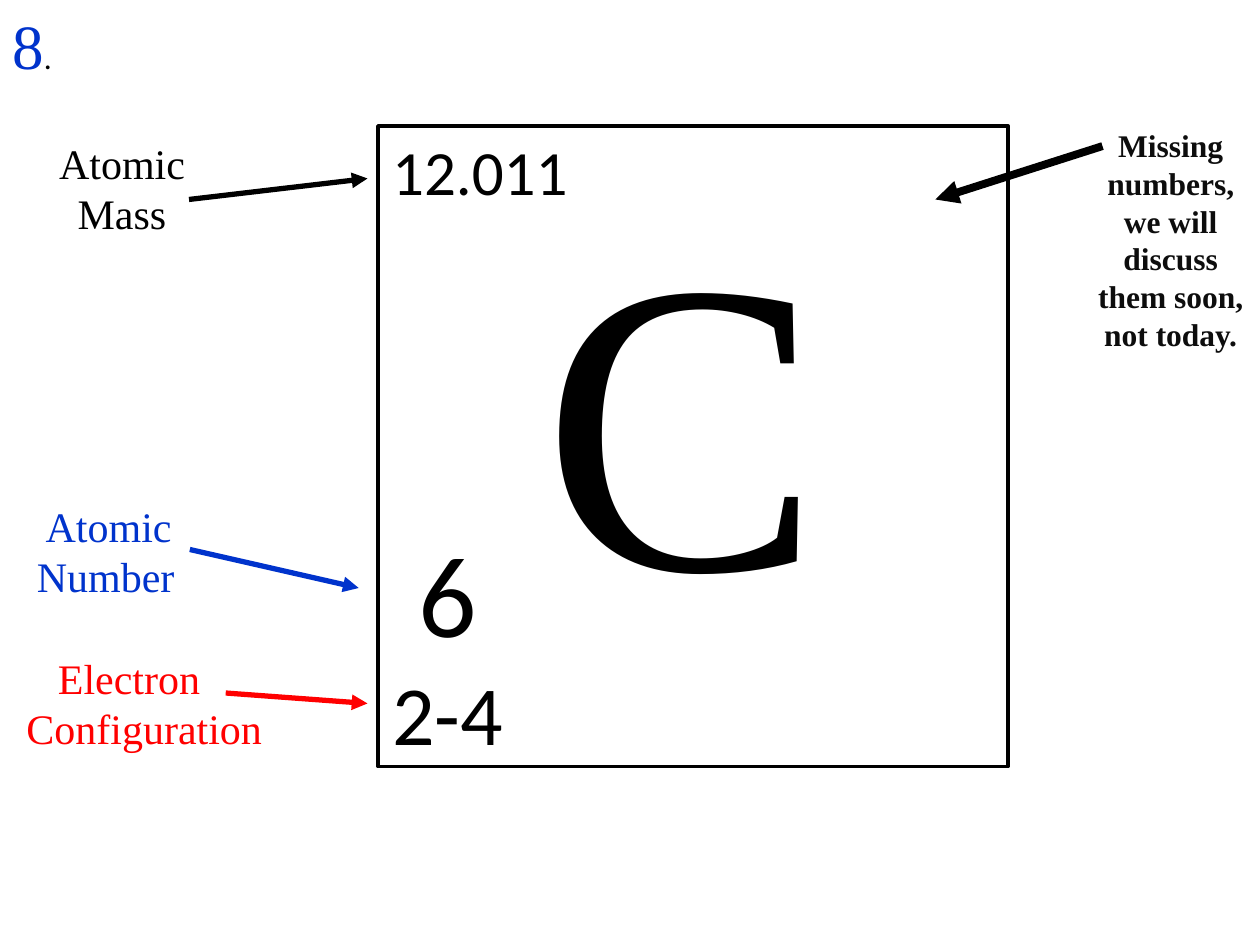
from lxml import etree
from pptx import Presentation
from pptx.dml.color import RGBColor
from pptx.enum.shapes import MSO_CONNECTOR, MSO_SHAPE
from pptx.enum.text import MSO_AUTO_SIZE, PP_ALIGN
from pptx.oxml.ns import qn
from pptx.util import Pt

STRAIGHT = MSO_CONNECTOR.STRAIGHT
RECTANGLE = MSO_SHAPE.RECTANGLE
GROW = MSO_AUTO_SIZE.SHAPE_TO_FIT_TEXT
LEFT, CENTER = PP_ALIGN.LEFT, PP_ALIGN.CENTER

SERIF, SANS = "Times New Roman", "Calibri"
BLACK, WHITE, BLUE, RED, CHARCOAL = "000000", "FFFFFF", "0033CC", "FF0000", "0D0D0D"


def color(value):
    """Turn a hex string into a colour."""
    return RGBColor.from_string(value)


def style(span, size, ink, font, bold=False):
    """Set the font of one run."""
    span.font.size = Pt(size)
    span.font.name = font
    span.font.bold = bold
    span.font.color.rgb = color(ink)


def add_text(page, box, lines, font, align=LEFT, bold=False):
    """Add a text box from lines of (text, size, ink, indent, space before)."""
    frame = page.shapes.add_textbox(*map(Pt, box)).text_frame
    frame.word_wrap = True
    frame.auto_size = GROW
    for index, (text, size, ink, indent, gap) in enumerate(lines):
        para = frame.add_paragraph() if index else frame.paragraphs[0]
        para.text = text
        para.alignment = align
        para.space_before = Pt(gap)
        para._p.get_or_add_pPr().set("marL", str(Pt(indent)))
        style(para.runs[0], size, ink, font, bold)
    return frame


def add_arrow(page, start, end, ink, width=3):
    """Draw a straight arrow with a triangle at its end."""
    arrow = page.shapes.add_connector(STRAIGHT, *map(Pt, start + end))
    arrow.line.color.rgb = color(ink)
    arrow.line.width = Pt(width)
    etree.SubElement(arrow.line._get_or_add_ln(), qn("a:tailEnd"), type="triangle")
    etree.SubElement(arrow._element.spPr, qn("a:effectLst"))


def add_element_tile(page, box):
    """Draw the element square with its symbol and figures."""
    left, top, width, height = box
    tile = page.shapes.add_shape(RECTANGLE, *map(Pt, box))
    tile.shadow.inherit = False
    tile.fill.solid()
    tile.fill.fore_color.rgb = color(WHITE)
    tile.line.color.rgb = color(BLACK)
    tile.line.width = Pt(2)
    add_text(page, (left + 1, top, width - 1, 51), [("12.011", 36, BLACK, 0, 0)], SANS)
    figures = [("6", 66, BLACK, 15, 0), ("2-4", 48, BLACK, 0, 0)]
    add_text(page, (left + 1, top + 223, 180, 145.5), figures, SANS)
    add_text(page, (left + 87, top + 11.5, 138, 297), [("C", 239, BLACK, 0, 0)], SERIF)


def add_labels(page, box):
    """Name the figures on the left and point to each of them."""
    left, top, width, height = box
    mass = [("Atomic", 24, BLACK, 0, 0), ("Mass", 24, BLACK, 0, 0)]
    add_text(page, (left, top, 135.5, 65.5), mass, SERIF, CENTER)
    lower = [
        ("Atomic", 24, BLUE, 17, 0),
        ("Number", 24, BLUE, 12, 0),
        ("Electron", 24, RED, 24, 29),
        ("Configuration", 24, RED, 6, 0),
    ]
    add_text(page, (left, top + 207.5, width, 152.5), lower, SERIF)
    arrows = [
        ((106, 39), (208, 27), BLACK),
        ((106.5, 239), (203, 261), BLUE),
        ((127, 321), (208, 327), RED),
    ]
    for (x1, y1), (x2, y2), ink in arrows:
        add_arrow(page, (left + x1, top + y1), (left + x2, top + y2), ink)


def add_note(page, box):
    """Place the note about missing numbers with its arrow."""
    left, top, width, height = box
    add_arrow(page, (left + 13.5, top + 15), (left - 82, top + 45.5), BLACK, 4.5)
    words = "Missing numbers, we will discuss them soon, not today."
    add_text(page, box, [(words, 18, CHARCOAL, 0, 0)], SERIF, CENTER, True)


def add_question_number(page, box):
    """Place the question number with its smaller full stop."""
    frame = add_text(page, box, [("8", 36, BLUE, 0, 0)], SERIF)
    stop = frame.paragraphs[0].add_run()
    stop.text = "."
    style(stop, 18, BLACK, SANS)


def main():
    """Build the slide and save it."""
    deck = Presentation()
    deck.slide_width, deck.slide_height = Pt(720), Pt(540)
    page = deck.slides.add_slide(deck.slide_layouts[6])
    add_element_tile(page, (216, 72, 360, 366))
    add_labels(page, (2, 75, 207.5, 360))
    add_note(page, (616.5, 68.5, 105, 138))
    add_question_number(page, (0, 0, 66, 51))
    deck.save("out.pptx")


if __name__ == "__main__":
    main()
